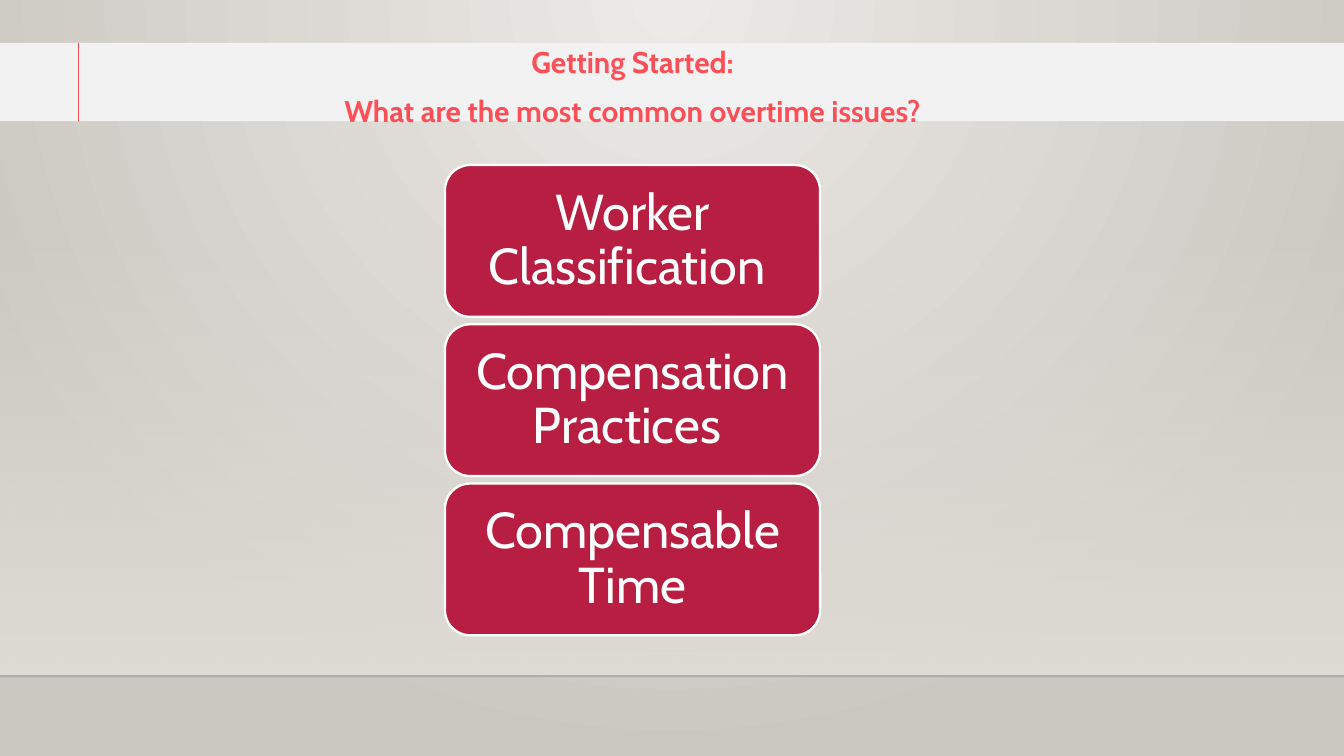
from pptx import Presentation
from pptx.dml.color import RGBColor
from pptx.enum.shapes import MSO_CONNECTOR as Link, MSO_SHAPE as Shape
from pptx.enum.text import MSO_ANCHOR as Anchor, MSO_AUTO_SIZE as Fit, PP_ALIGN as Align
from pptx.oxml import parse_xml
from pptx.oxml.ns import nsdecls, qn
from pptx.util import Cm, Pt

CORAL = RGBColor(0xFD, 0x4F, 0x57)
RED = RGBColor(0xB7, 0x1E, 0x42)
WHITE = RGBColor(0xFF, 0xFF, 0xFF)
PALE = RGBColor(0xF2, 0xF2, 0xF2)
BLACK = RGBColor(0x00, 0x00, 0x01)
SAND = RGBColor(0xDF, 0xDB, 0xD5)
LIGHT = RGBColor(0xEC, 0xEA, 0xE7)
STONE = RGBColor(0xCA, 0xC7, 0xC1)

WIDE, HIGH = 25.4, 14.29
FLOOR = 12.78
BAND_TOP, BAND_HIGH = 0.81, 1.48
HEADING = ["Getting Started:", "What are the most common overtime issues?"]
TOPICS = ["Worker Classification ", "Compensation Practices ", "Compensable Time"]
HEAD_FONT = {"name": "Cabin", "size": Pt(16), "bold": True}
BOX_FONT = {"name": "Cabin", "size": Pt(27), "bold": False}
HEAD_FRAME = {"word_wrap": True, "auto_size": Fit.NONE, "vertical_anchor": Anchor.TOP}
BOX_FRAME = {
    "word_wrap": True, "vertical_anchor": Anchor.MIDDLE,
    "margin_left": Cm(0.28), "margin_right": Cm(0.28),
    "margin_top": Cm(0.15), "margin_bottom": Cm(0.15),
}


def apply(item, values):
    for name, value in values.items():
        setattr(item, name, value)


def blend(props, first, last, alpha, course):
    fill = parse_xml(
        f'<a:gradFill {nsdecls("a")} rotWithShape="1"><a:gsLst>'
        f'<a:gs pos="0"><a:srgbClr val="{first}"><a:alpha val="{alpha}"/></a:srgbClr></a:gs>'
        f'<a:gs pos="100000"><a:srgbClr val="{last}"/></a:gs>'
        f'</a:gsLst>{course}</a:gradFill>')
    props.replace(props.find(qn("a:solidFill")), fill)


def add_box(slide, kind, color, *place):
    box = slide.shapes.add_shape(kind, *map(Cm, place))
    box.shadow.inherit = False
    box.fill.solid()
    box.fill.fore_color.rgb = color
    box.line.fill.background()
    return box


def add_line(slide, color, width, *ends):
    line = slide.shapes.add_connector(Link.STRAIGHT, *map(Cm, ends))
    line.line.color.rgb = color
    line.line.width = Pt(width)
    line._element.spPr.append(parse_xml(f'<a:effectLst {nsdecls("a")}/>'))
    return line


def write(para, text, font, color):
    para.text = text
    para.alignment = Align.CENTER
    apply(para.font, font)
    para.font.color.rgb = color


def add_scene(slide):
    slide.background.fill.solid()
    back = slide._element.find(".//" + qn("p:bgPr"))
    blend(back, LIGHT, STONE, 100000,
          '<a:path path="circle"><a:fillToRect l="43000" r="43000" b="100000"/></a:path>')
    wall = add_box(slide, Shape.RECTANGLE, SAND, 0, 4.22, WIDE, FLOOR - 4.22)
    blend(wall._element.spPr, SAND, SAND, 0, '<a:lin ang="5400000" scaled="0"/>')
    edge = add_line(slide, BLACK, 1, 0, FLOOR, WIDE, FLOOR)
    tint = edge._element.spPr.find(".//" + qn("a:srgbClr"))
    tint.append(parse_xml(f'<a:alpha {nsdecls("a")} val="20000"/>'))
    add_box(slide, Shape.RECTANGLE, PALE, 0, BAND_TOP, WIDE, BAND_HIGH)
    add_line(slide, CORAL, 0.75, 1.48, BAND_TOP, 1.48, BAND_TOP + BAND_HIGH)


def add_heading(slide):
    title = slide.shapes.title
    slide.shapes._spTree.append(title._element)
    apply(title, {"left": Cm(2.11), "top": Cm(0.69), "width": Cm(19.69), "height": Cm(1.75)})
    frame = title.text_frame
    apply(frame, HEAD_FRAME)
    for i, text in enumerate(HEADING):
        para = frame.add_paragraph() if i else frame.paragraphs[0]
        write(para, text, HEAD_FONT, CORAL)
        para.space_before = Pt(7.5 if i else 0)


def add_topic(slide, text, top):
    box = add_box(slide, Shape.ROUNDED_RECTANGLE, RED, 8.41, top, 7.09, 2.87)
    box.line.color.rgb = WHITE
    box.line.width = Pt(1.25)
    apply(box.text_frame, BOX_FRAME)
    para = box.text_frame.paragraphs[0]
    write(para, text, BOX_FONT, WHITE)
    para.line_spacing = 0.9


def main():
    deck = Presentation()
    apply(deck, {"slide_width": Cm(WIDE), "slide_height": Cm(HIGH)})
    slide = deck.slides.add_slide(deck.slide_layouts[5])
    add_scene(slide)
    add_heading(slide)
    for i, text in enumerate(TOPICS):
        add_topic(slide, text, 3.12 + i * 3.01)
    deck.save("out.pptx")


if __name__ == "__main__":
    main()
